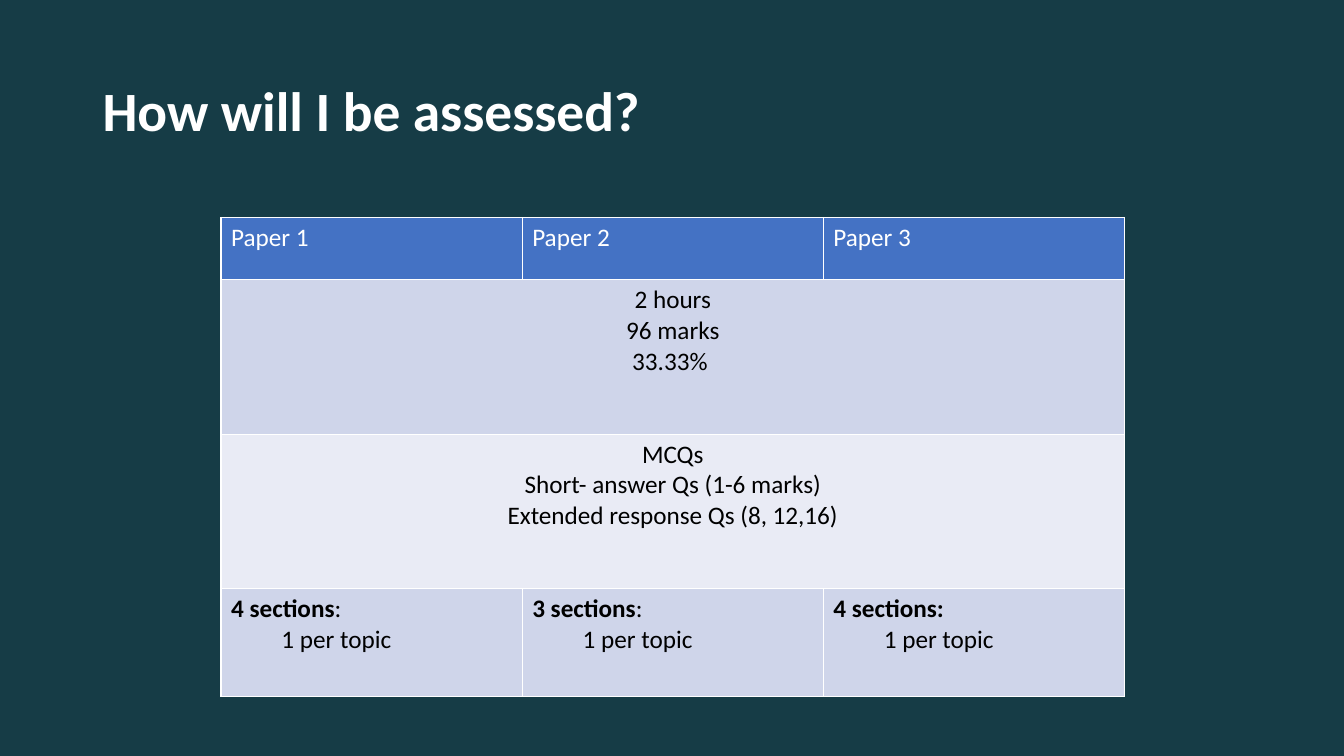
from lxml import etree
from pptx import Presentation
from pptx.dml.color import RGBColor
from pptx.enum import text
from pptx.oxml import ns
from pptx.util import Cm, Pt

TITLE = "How will I be assessed?"
PAPERS = ["Paper 1", "Paper 2", "Paper 3"]
SHARED_ROWS = [
    ["2 hours", "96 marks", "33.33% "],
    ["MCQs", "Short- answer Qs (1-6 marks)", "Extended response Qs (8, 12,16)"],
]
# Bold part, plain part, indented line
SECTIONS = [
    ("4 sections", ":", "1 per topic"),
    ("3 sections", ":", "1 per topic"),
    ("4 sections:", "", "1 per topic"),
]

FONT = "Calibri"
BACKGROUND = RGBColor(0x16, 0x3C, 0x46)
WHITE = RGBColor(0xFF, 0xFF, 0xFF)
BLACK = RGBColor(0x00, 0x00, 0x00)
HEADER_BLUE = RGBColor(0x44, 0x72, 0xC4)
BAND_DARK = RGBColor(0xCF, 0xD5, 0xEA)
BAND_LIGHT = RGBColor(0xE9, 0xEB, 0xF5)
ROW_FILLS = [HEADER_BLUE, BAND_DARK, BAND_LIGHT, BAND_DARK]

COLUMN_WIDTH = Cm(7.59)
ROW_HEIGHTS = [Cm(1.57), Cm(3.89), Cm(3.89), Cm(2.72)]


def format_run(run, size, color, bold=False):
    run.font.name = FONT
    run.font.size = Pt(size)
    run.font.color.rgb = color
    run.font.bold = bold


def add_borders(cell):
    """Put a thin white line on all four sides, ahead of the cell fill."""
    properties = cell._tc.get_or_add_tcPr()
    for position, side in enumerate(("lnL", "lnR", "lnT", "lnB")):
        line = etree.Element(ns.qn(f"a:{side}"), w=str(Pt(1)))
        fill = etree.SubElement(line, ns.qn("a:solidFill"))
        etree.SubElement(fill, ns.qn("a:srgbClr"), val=str(WHITE))
        properties.insert(position, line)


def add_title(slide):
    title = slide.shapes.title
    title.left, title.top = Cm(2.33), Cm(1.01)
    title.width, title.height = Cm(29.21), Cm(3.68)
    frame = title.text_frame
    frame.text = TITLE
    frame.auto_size = text.MSO_AUTO_SIZE.NONE
    frame.vertical_anchor = text.MSO_ANCHOR.MIDDLE
    paragraph = frame.paragraphs[0]
    paragraph.alignment = text.PP_ALIGN.LEFT
    paragraph.line_spacing = 0.9
    format_run(paragraph.runs[0], 39.6, WHITE, bold=True)


def add_assessment_table(slide):
    table = slide.shapes.add_table(
        len(ROW_HEIGHTS), len(PAPERS), Cm(5.57), Cm(5.48),
        COLUMN_WIDTH * len(PAPERS), sum(ROW_HEIGHTS)).table
    for column in table.columns:
        column.width = COLUMN_WIDTH
    for row, height, color in zip(table.rows, ROW_HEIGHTS, ROW_FILLS):
        row.height = height
        for cell in row.cells:
            cell.fill.solid()
            cell.fill.fore_color.rgb = color
            add_borders(cell)

    # Header row
    for column, paper in enumerate(PAPERS):
        cell = table.cell(0, column)
        cell.text_frame.text = paper
        format_run(cell.text_frame.paragraphs[0].runs[0], 18, WHITE)

    # Rows shared by all papers
    for row, lines in enumerate(SHARED_ROWS, start=1):
        cell = table.cell(row, 0)
        cell.merge(table.cell(row, len(PAPERS) - 1))
        cell.text_frame.text = "\n".join(lines)
        for paragraph in cell.text_frame.paragraphs:
            paragraph.alignment = text.PP_ALIGN.CENTER
            format_run(paragraph.runs[0], 18, BLACK)

    # Sections of each paper
    for column, (heading, suffix, detail) in enumerate(SECTIONS):
        frame = table.cell(len(ROW_HEIGHTS) - 1, column).text_frame
        frame.text = f"{heading}\n{detail}"
        first, second = frame.paragraphs
        format_run(first.runs[0], 18, BLACK, bold=True)
        if suffix:
            run = first.add_run()
            run.text = suffix
            format_run(run, 18, BLACK)
        second.level = 1
        second._p.get_or_add_pPr().set("marL", str(Cm(1.27)))
        format_run(second.runs[0], 18, BLACK)


def main():
    presentation = Presentation()
    presentation.slide_width = Cm(33.87)
    presentation.slide_height = Cm(19.05)
    slide = presentation.slides.add_slide(presentation.slide_layouts[5])
    slide.background.fill.solid()
    slide.background.fill.fore_color.rgb = BACKGROUND
    add_title(slide)
    add_assessment_table(slide)
    presentation.save("out.pptx")


if __name__ == "__main__":
    main()
